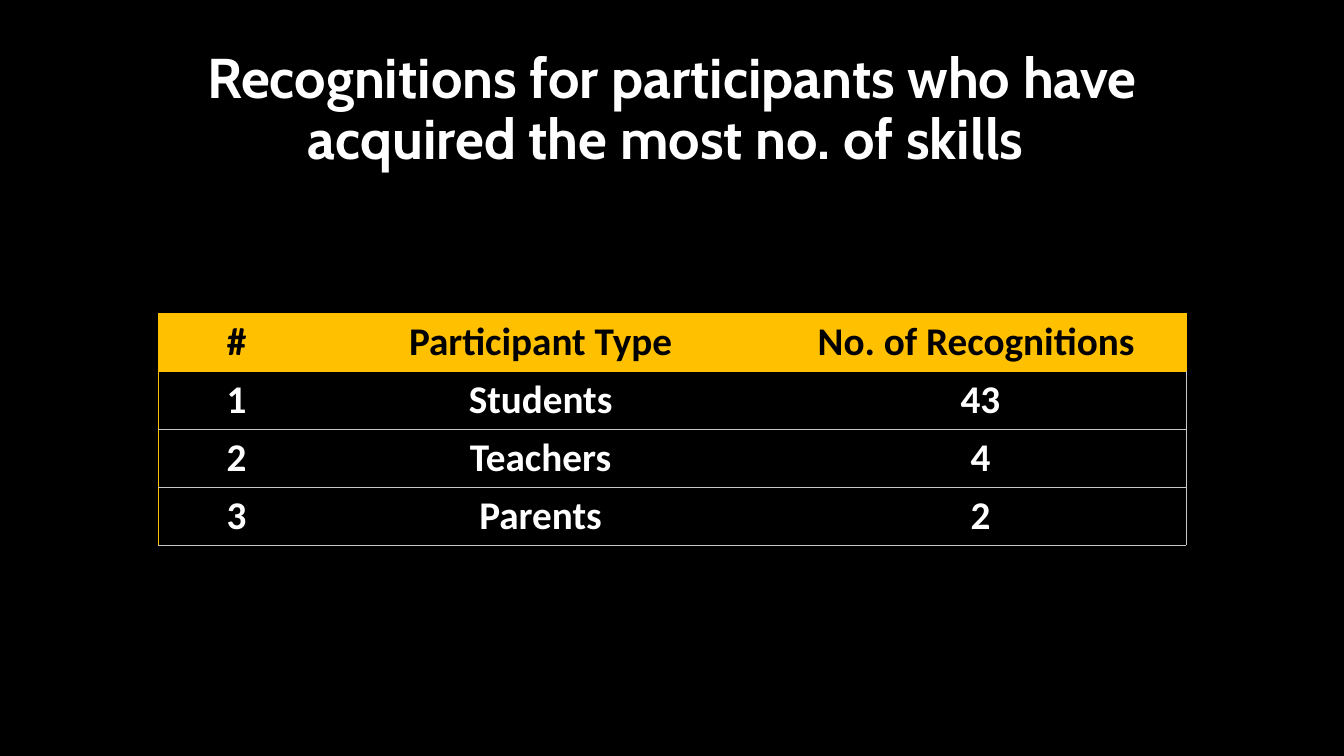
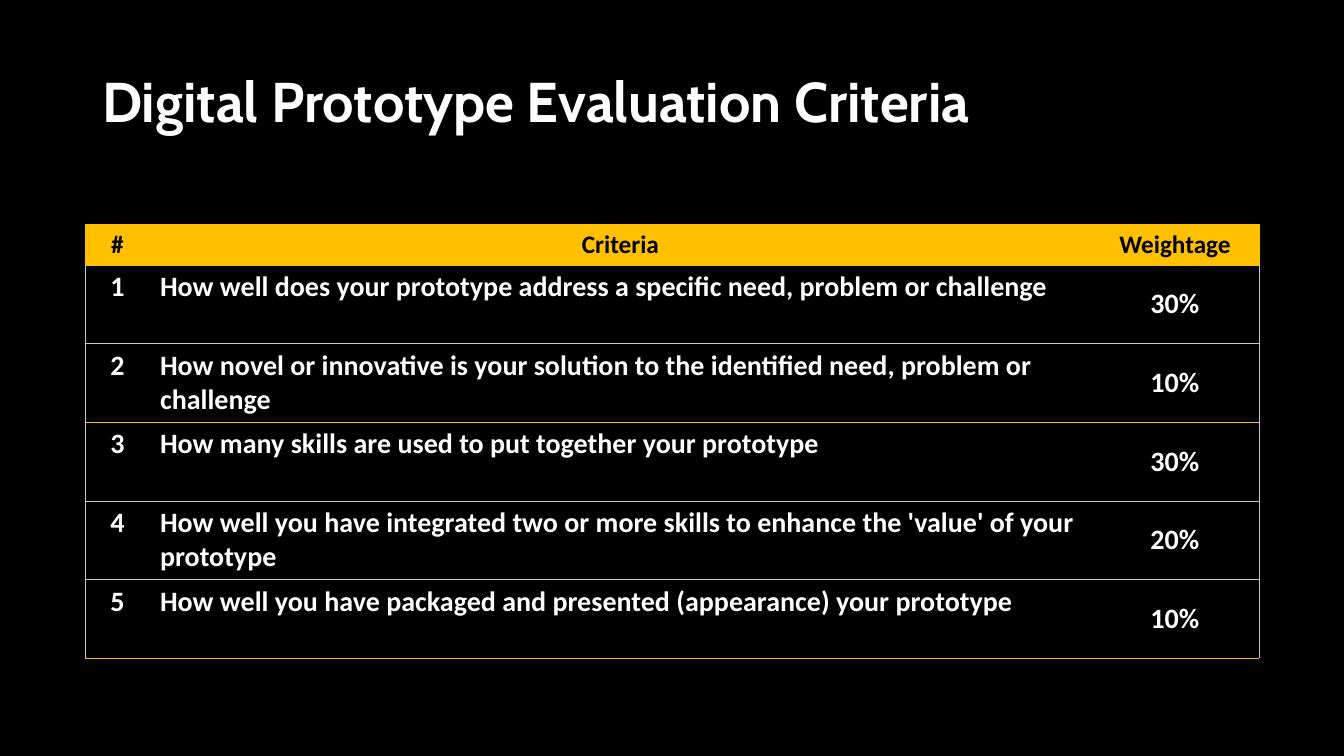
from lxml import etree
from pptx import Presentation
from pptx.dml.color import RGBColor
from pptx.enum.text import MSO_ANCHOR, MSO_AUTO_SIZE, PP_ALIGN
from pptx.oxml.ns import qn
from pptx.util import Pt

LEFT, MID = PP_ALIGN.LEFT, PP_ALIGN.CENTER
TOP, HALF = MSO_ANCHOR.TOP, MSO_ANCHOR.MIDDLE
FIXED = MSO_AUTO_SIZE.NONE
BLACK = RGBColor(0x00, 0x00, 0x00)
WHITE = RGBColor(0xFF, 0xFF, 0xFF)
GOLD = RGBColor(0xFF, 0xC0, 0x00)
GREY = RGBColor(0xC9, 0xC9, 0xC9)
HEAD_FONT, TEXT_FONT = "Cabin", "Calibri"
SCALE = 914400 / 100.8
WIDE, HIGH = 1344, 756


def px(size):
    """Turn px into EMU."""
    return round(size * SCALE)


class Deck:
    """Hold the deck style and the current slide."""

    def __init__(self):
        """Start a black deck."""
        self.prs = Presentation()
        self.prs.slide_width, self.prs.slide_height = px(WIDE), px(HIGH)
        fill = self.prs.slide_master.background.fill
        fill.solid()
        fill.fore_color.rgb = BLACK
        self.slide = None

    def page(self, title, top, align):
        """Add a slide with its title."""
        self.slide = self.prs.slides.add_slide(self.prs.slide_layouts[5])
        box = self.slide.shapes.title
        box.left, box.top = px(92), px(top)
        box.width, box.height = px(1160), px(146)
        frame = box.text_frame
        frame.word_wrap = True
        frame.auto_size = FIXED
        frame.vertical_anchor = HALF
        frame.paragraphs[0].line_spacing = 0.9
        self.text(frame, title, HEAD_FONT, 40, WHITE, align)

    def text(self, frame, words, font, size, color, align):
        """Write one bold run."""
        para = frame.paragraphs[0]
        para.alignment = align
        run = para.add_run()
        run.text = words
        run.font.name, run.font.size = font, Pt(size)
        run.font.bold = True
        run.font.color.rgb = color

    def border(self, cell, sides):
        """Set the left, right, top and bottom lines, None for no line."""
        props = cell._tc.get_or_add_tcPr()
        for at, (side, color) in enumerate(zip("LRTB", sides)):
            line = etree.Element(qn("a:ln" + side), w=str(Pt(0.5)))
            if color is None:
                etree.SubElement(line, qn("a:noFill"))
            else:
                fill = etree.SubElement(line, qn("a:solidFill"))
                etree.SubElement(fill, qn("a:srgbClr"), val=str(color))
            props.insert(at, line)

    def table(self, left, top, cols, head, step, rows, sizes, rules, edge, aligns):
        """Add a table with a gold head; rules colour the line under each row."""
        high = head + step * (len(rows) - 1)
        grid = self.slide.shapes.add_table(
            len(rows), len(cols), px(left), px(top), px(sum(cols)), px(high)).table
        grid.horz_banding = False
        for col, width in zip(grid.columns, cols):
            col.width = px(width)
        last = len(cols) - 1
        for r, row in enumerate(rows):
            first = r == 0
            grid.rows[r].height = px(head if first else step)
            for c, words in enumerate(row):
                cell = grid.cell(r, c)
                sides = (
                    (GOLD if first else edge) if c == 0 else None,
                    (GOLD if first else GREY) if c == last else None,
                    GOLD if first else rules[r - 1],
                    rules[r],
                )
                self.border(cell, sides)
                cell.fill.solid()
                cell.fill.fore_color.rgb = GOLD if first else BLACK
                cell.vertical_anchor = HALF if c == last else TOP
                self.text(cell.text_frame, words, TEXT_FONT,
                          sizes[0] if first else sizes[1],
                          BLACK if first else WHITE,
                          MID if first else aligns[c])


def main():
    """Build and save the slides."""
    deck = Deck()
    deck.page("Recognitions for participants who have acquired the most no. of skills ",
              38, MID)
    deck.table(158, 313, (157, 460, 411), 58, 58, (
        ("#", "Participant Type ", "No. of Recognitions "),
        ("1", "Students ", "43"),
        ("2", "Teachers ", "4"),
        ("3", "Parents ", "2"),
    ), (28, 28), (GOLD, GREY, GREY, GREY), GOLD, (MID, MID, MID))

    deck.page("Digital Prototype Evaluation Criteria", 31, LEFT)
    deck.table(85, 224, (65, 941, 168), 41, 78.6, (
        ("#", "Criteria", "Weightage"),
        ("1", "How well does your prototype address a specific need, "
              "problem or challenge", "30%"),
        ("2", "How novel or innovative is your solution to the identified need, "
              "problem or challenge", "10%"),
        ("3", "How many skills are used to put together your prototype", "30%"),
        ("4", "How well you have integrated two or more skills to enhance "
              "the 'value' of your prototype", "20%"),
        ("5", "How well you have packaged and presented (appearance) "
              "your prototype", "10%"),
    ), (18, 20), (GOLD, GREY, GOLD, GREY, GREY, GOLD), GREY, (MID, LEFT, MID))
    deck.prs.save("out.pptx")


if __name__ == "__main__":
    main()
